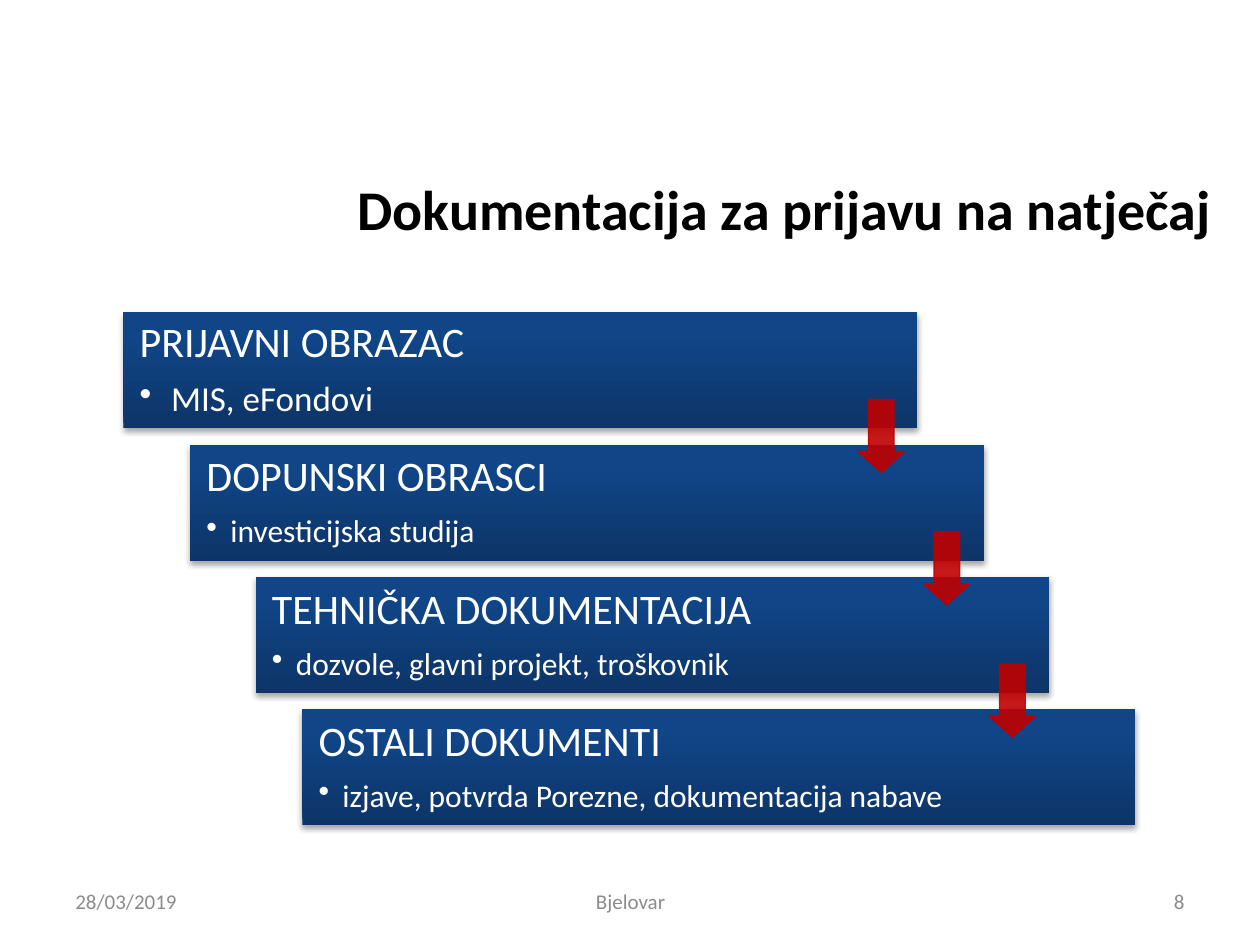
"""Build the slide listing the documents needed for a grant application."""
from dataclasses import dataclass

from pptx import Presentation
from pptx import util as u
from pptx.dml.color import RGBColor
from pptx.enum import shapes, text
from pptx.oxml import parse_xml
from pptx.oxml.ns import nsdecls, qn
from lxml import etree

BLACK = RGBColor(0x00, 0x00, 0x00)
WHITE = RGBColor(0xFF, 0xFF, 0xFF)
GREY = RGBColor(0x8C, 0x8C, 0x8C)
RED = RGBColor(0xC0, 0x00, 0x00)
NAVY = RGBColor(0x0D, 0x35, 0x68)
BLUE = RGBColor(0x10, 0x45, 0x87)
BRIGHT_BLUE = RGBColor(0x0E, 0x45, 0x8A)
GRADIENT = ((0, NAVY), (80, BLUE), (100, BRIGHT_BLUE))

FONT = "Calibri"
FIRST_TOP, ROW_STEP, BAR_HEIGHT = 2.48, 1.05, 0.92
ARROW_LEFT, ARROW_TOP, ARROW_SHIFT = 6.81, 3.17, 0.52


@dataclass(frozen=True)
class Step:
    heading: str
    detail: str
    left: float
    width: float = 6.3
    text_width: float = 5.15
    detail_size: int = 18
    indent: float = 0.19


@dataclass(frozen=True)
class Footer:
    words: str
    left: float
    width: float
    align: text.PP_ALIGN


STEPS = (
    Step("PRIJAVNI OBRAZAC", "MIS, eFondovi", 0.98, text_width=5.26, detail_size=20, indent=0.25),
    Step("DOPUNSKI OBRASCI", "investicijska studija", 1.51),
    Step("TEHNIČKA DOKUMENTACIJA", "dozvole, glavni projekt, troškovnik", 2.03),
    Step("OSTALI DOKUMENTI", "izjave, potvrda Porezne, dokumentacija nabave", 2.4,
         width=6.61, text_width=5.4),
)
FOOTERS = (
    Footer("28/03/2019", 0.5, 2.33, text.PP_ALIGN.LEFT),
    Footer("Bjelovar", 3.42, 3.17, text.PP_ALIGN.CENTER),
    Footer("8", 7.17, 2.33, text.PP_ALIGN.RIGHT),
)


def write(para, words: str, *, size: float, color: RGBColor, bold: bool = False,
          align=text.PP_ALIGN.LEFT, line_spacing=None, space_after: float = 0,
          indent: float = 0) -> None:
    """Put formatted text in a paragraph, bulleted when an indent is given."""
    para.alignment = align
    para.space_after = u.Pt(space_after)
    if line_spacing:
        para.line_spacing = line_spacing
    if indent:
        properties = para._p.get_or_add_pPr()
        properties.set("marL", str(u.Inches(indent)))
        properties.set("indent", str(-u.Inches(indent)))
        etree.SubElement(properties, qn("a:buChar")).set("char", "•")
    span = para.add_run()
    span.text = words
    span.font.name = FONT
    span.font.size = u.Pt(size)
    span.font.bold = bold
    span.font.color.rgb = color


def add_box(page, left: float, top: float, width: float, height: float):
    """Add a wrapping, vertically centred text box and return its frame."""
    box = page.shapes.add_textbox(*map(u.Inches, (left, top, width, height)))
    frame = box.text_frame
    frame.word_wrap = True
    frame.vertical_anchor = text.MSO_ANCHOR.MIDDLE
    return frame


def add_bar(page, step: Step, top: float) -> None:
    """Draw the shaded bar of a step."""
    bar = page.shapes.add_shape(
        shapes.MSO_SHAPE.RECTANGLE,
        *map(u.Inches, (step.left, top, step.width, BAR_HEIGHT)))
    bar.line.fill.background()
    stops = "".join(f'<a:gs pos="{place * 1000}"><a:srgbClr val="{color}"/></a:gs>'
                    for place, color in GRADIENT)
    gradient = parse_xml(
        f'<a:gradFill {nsdecls("a")} rotWithShape="1"><a:gsLst>{stops}</a:gsLst>'
        '<a:lin ang="16200000" scaled="0"/></a:gradFill>')
    shadow = parse_xml(
        f'<a:effectLst {nsdecls("a")}><a:outerShdw blurRad="{u.Pt(3.1)}" dist="{u.Pt(1.8)}" '
        'dir="5400000" rotWithShape="0"><a:srgbClr val="000000"><a:alpha val="35000"/>'
        '</a:srgbClr></a:outerShdw></a:effectLst>')
    properties = bar._element.spPr
    properties.find(qn("a:prstGeom")).addnext(gradient)
    properties.append(shadow)


def add_step(page, step: Step, top: float) -> None:
    """Draw a step with its heading and bulleted detail."""
    add_bar(page, step, top)
    frame = add_box(page, step.left + 0.03, top + 0.03, step.text_width, 0.86)
    frame.margin_left = frame.margin_right = u.Inches(0.1)
    frame.margin_top = frame.margin_bottom = u.Inches(0.1)
    write(frame.paragraphs[0], step.heading, size=24, color=WHITE,
          line_spacing=0.9, space_after=24 * 0.35)
    detail = frame.add_paragraph()
    detail.level = 1
    write(detail, step.detail, size=step.detail_size, color=WHITE, line_spacing=0.9,
          space_after=step.detail_size * 0.15, indent=step.indent)


def add_arrow(page, left: float, top: float) -> None:
    """Draw a slightly transparent arrow leading to the next step."""
    arrow = page.shapes.add_shape(shapes.MSO_SHAPE.DOWN_ARROW,
                                  *map(u.Inches, (left, top, 0.37, 0.58)))
    arrow.adjustments[0], arrow.adjustments[1] = 0.55, 0.45
    arrow.shadow.inherit = False
    arrow.line.width = u.Pt(0.75)
    for fill in (arrow.fill, arrow.line.fill):
        fill.solid()
        fill.fore_color.rgb = RED
    for color in arrow._element.spPr.iter(qn("a:srgbClr")):
        etree.SubElement(color, qn("a:alpha")).set("val", "90000")


def add_title(page, words: str) -> None:
    """Place and format the slide title."""
    title = page.shapes.title
    title.left, title.top, title.width, title.height = map(u.Inches, (0.28, 1.23, 9.44, 0.85))
    frame = title.text_frame
    frame.auto_size = text.MSO_AUTO_SIZE.NONE
    frame.vertical_anchor = text.MSO_ANCHOR.MIDDLE
    write(frame.paragraphs[0], words, size=32, color=BLACK, bold=True,
          align=text.PP_ALIGN.RIGHT)


def main() -> None:
    """Build and save the deck."""
    deck = Presentation()
    deck.slide_width, deck.slide_height = u.Inches(10), u.Inches(7.5)
    page = deck.slides.add_slide(deck.slide_layouts.get_by_name("Title Only"))
    add_title(page, "Dokumentacija za prijavu na natječaj")
    for row, step in enumerate(STEPS):
        add_step(page, step, FIRST_TOP + row * ROW_STEP)
    for row in range(len(STEPS) - 1):
        add_arrow(page, ARROW_LEFT + row * ARROW_SHIFT, ARROW_TOP + row * ROW_STEP)
    for footer in FOOTERS:
        frame = add_box(page, footer.left, 6.95, footer.width, 0.4)
        write(frame.paragraphs[0], footer.words, size=12, color=GREY, align=footer.align)
    deck.save("out.pptx")


if __name__ == "__main__":
    main()
